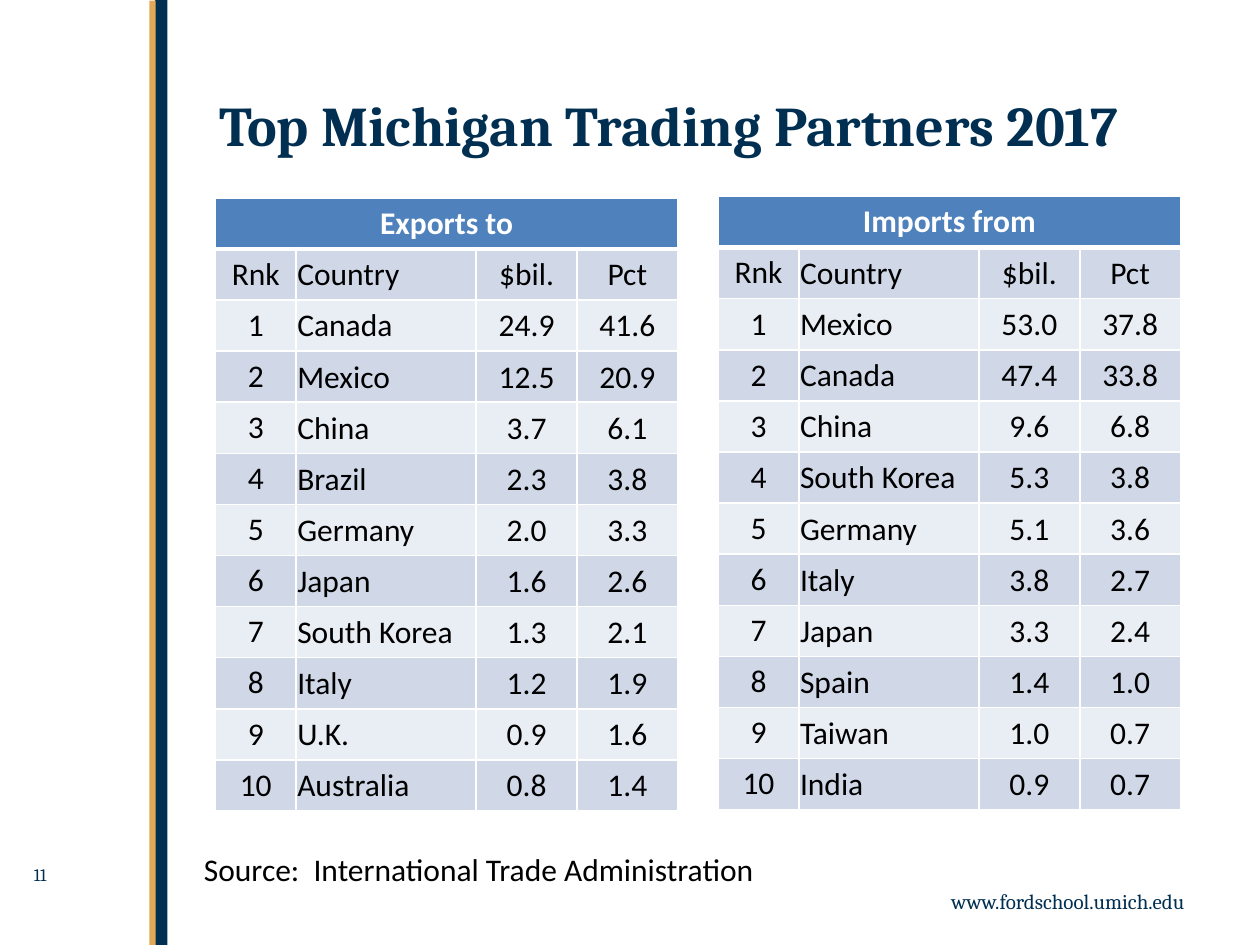
from lxml.etree import SubElement
from pptx import Presentation
from pptx.dml.color import RGBColor
from pptx.enum.shapes import MSO_SHAPE
from pptx.enum.text import MSO_ANCHOR, PP_ALIGN
from pptx.oxml.ns import qn
from pptx.util import Pt

PX = 9144
NAVY = RGBColor(0x00, 0x2F, 0x52)
GOLD = RGBColor(0xE3, 0xA8, 0x56)
BLUE = RGBColor(0x4F, 0x81, 0xBD)
DARK_BAND = RGBColor(0xD0, 0xD8, 0xE8)
LIGHT_BAND = RGBColor(0xE9, 0xED, 0xF4)
WHITE = RGBColor(0xFF, 0xFF, 0xFF)
BLACK = RGBColor(0x00, 0x00, 0x00)


def write_text(text_frame, text, align, font_name, size, color, bold=False):
    paragraph = text_frame.paragraphs[0]
    paragraph.text = text
    paragraph.alignment = align
    font = paragraph.runs[0].font
    font.color.rgb = color
    for name, value in {"name": font_name, "size": Pt(size), "bold": bold}.items():
        setattr(font, name, value)


def add_borders(cell, widths):
    properties = cell._tc.get_or_add_tcPr()
    for side, width in widths.items():
        line = SubElement(properties, qn(f"a:ln{side}"), w=str(Pt(width)))
        fill = SubElement(line, qn("a:solidFill"))
        SubElement(fill, qn("a:srgbClr"), val=str(WHITE))


presentation = Presentation()
presentation.slide_width = 1000 * PX
presentation.slide_height = 750 * PX
slide = presentation.slides.add_slide(presentation.slide_layouts[5])

for left, top, thickness, color in [(-247, 370, 10, NAVY), (-254, 373, 5, GOLD)]:
    bar = slide.shapes.add_shape(
        MSO_SHAPE.RECTANGLE, left * PX, top * PX, 750 * PX, thickness * PX
    )
    bar.rotation = 270
    bar.shadow.inherit = False
    bar.fill.solid()
    bar.fill.fore_color.rgb = color
    bar.line.fill.background()

title = slide.shapes.title
title_box = {"left": 164, "top": 64, "width": 792, "height": 69}
for name, value in title_box.items():
    setattr(title, name, value * PX)
title.text_frame.vertical_anchor = MSO_ANCHOR.MIDDLE
write_text(
    title.text_frame, "Top Michigan Trading Partners 2017",
    PP_ALIGN.LEFT, "Cambria", 32, NAVY, True,
)

text_boxes = [
    (700, 700, 250, 30, "www.fordschool.umich.edu", PP_ALIGN.RIGHT, "Cambria", 12, NAVY),
    (17, 681, 92, 34, "11", PP_ALIGN.LEFT, "Cambria", 10, NAVY),
    (152, 670, 491, 40, "Source:  International Trade Administration",
     PP_ALIGN.LEFT, "Calibri", 18, BLACK),
]
for left, top, width, height, *text_format in text_boxes:
    text_box = slide.shapes.add_textbox(left * PX, top * PX, width * PX, height * PX)
    text_box.text_frame.word_wrap = True
    write_text(text_box.text_frame, *text_format)

column_names = ("Country", "$bil.", "Pct")
imports = [
    ("Mexico", "53.0", "37.8"),
    ("Canada", "47.4", "33.8"),
    ("China", "9.6", "6.8"),
    ("South Korea", "5.3", "3.8"),
    ("Germany", "5.1", "3.6"),
    ("Italy", "3.8", "2.7"),
    ("Japan", "3.3", "2.4"),
    ("Spain", "1.4", "1.0"),
    ("Taiwan", "1.0", "0.7"),
    ("India", "0.9", "0.7"),
]
exports = [
    ("Canada", "24.9", "41.6"),
    ("Mexico", "12.5", "20.9"),
    ("China", "3.7", "6.1"),
    ("Brazil", "2.3", "3.8"),
    ("Germany", "2.0", "3.3"),
    ("Japan", "1.6", "2.6"),
    ("South Korea", "1.3", "2.1"),
    ("Italy", "1.2", "1.9"),
    ("U.K.", "0.9", "1.6"),
    ("Australia", "0.8", "1.4"),
]
column_widths = (64, 143, 80, 80)
value_cell_format = {
    "margin_left": PX,
    "margin_right": PX,
    "margin_top": PX,
    "margin_bottom": 0,
    "vertical_anchor": MSO_ANCHOR.MIDDLE,
}

for left, top, heading, partners in [
    (570, 156, "Imports from", imports),
    (171, 157, "Exports to", exports),
]:
    table = slide.shapes.add_table(
        len(partners) + 2, len(column_widths),
        left * PX, top * PX, sum(column_widths) * PX, 487 * PX,
    ).table
    for column, width in zip(table.columns, column_widths):
        column.width = width * PX

    for cell in table.rows[0].cells:
        add_borders(cell, {"L": 1, "R": 1, "T": 1, "B": 3})
        cell.fill.solid()
        cell.fill.fore_color.rgb = BLUE
    heading_cell = table.cell(0, 0)
    heading_cell.merge(table.cell(0, len(column_widths) - 1))
    write_text(
        heading_cell.text_frame, heading, PP_ALIGN.CENTER, "Calibri", 18, WHITE, True
    )

    for row, values in enumerate([column_names] + partners, start=1):
        rank = "Rnk" if row == 1 else str(row - 1)
        for column, text in enumerate((rank, *values)):
            cell = table.cell(row, column)
            add_borders(cell, {"L": 1, "R": 1, "T": 3 if row == 1 else 1, "B": 1})
            cell.fill.solid()
            cell.fill.fore_color.rgb = DARK_BAND if row % 2 else LIGHT_BAND
            if column > 0:
                for name, value in value_cell_format.items():
                    setattr(cell, name, value)
            align = PP_ALIGN.LEFT if column == 1 else PP_ALIGN.CENTER
            write_text(cell.text_frame, text, align, "Calibri", 18, BLACK)

presentation.save("out.pptx")
